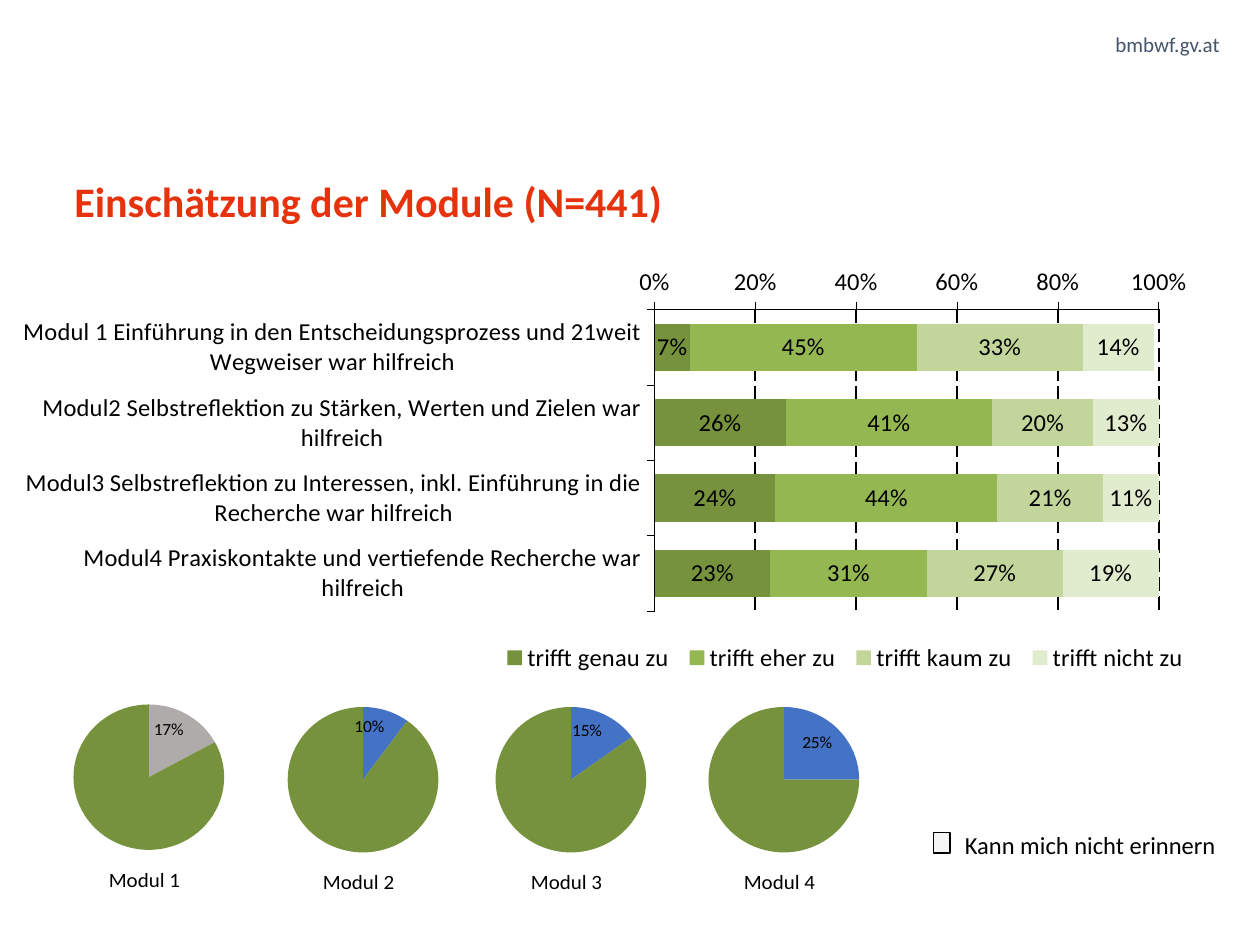
"""Build the slide that shows how participants rated the four modules."""
from lxml import etree
from pptx import Presentation
from pptx.chart import data
from pptx.dml.color import RGBColor
from pptx.enum import chart as charts, dml, shapes, text
from pptx.oxml import ns
from pptx.util import Inches, Pt

FONT = "Calibri"
BLACK = RGBColor(0x00, 0x00, 0x00)
RED = RGBColor(0xE6, 0x33, 0x0E)
SLATE = RGBColor(0x44, 0x54, 0x6A)
GREY = RGBColor(0xAF, 0xAB, 0xAB)
BLUE = RGBColor(0x44, 0x72, 0xC4)
PALE = RGBColor(0xF5, 0xF5, 0xF5)
GREEN = RGBColor(0x76, 0x92, 0x3C)

TITLE = "Einschätzung der Module (N=441)"
MODULES = [
    "Modul 1 Einführung in den Entscheidungsprozess und 21weit Wegweiser war hilfreich",
    "Modul2 Selbstreflektion zu Stärken, Werten und Zielen war hilfreich",
    "Modul3 Selbstreflektion zu Interessen, inkl. Einführung in die Recherche war hilfreich",
    "Modul4 Praxiskontakte und vertiefende Recherche war hilfreich",
]
RATINGS = [
    ("trifft genau zu", (0.07, 0.26, 0.24, 0.23), GREEN),
    ("trifft eher zu", (0.45, 0.41, 0.44, 0.31), RGBColor(0x95, 0xB7, 0x51)),
    ("trifft kaum zu", (0.33, 0.20, 0.21, 0.27), RGBColor(0xC2, 0xD6, 0x9B)),
    ("trifft nicht zu", (0.14, 0.13, 0.11, 0.19), RGBColor(0xE1, 0xEB, 0xCD)),
]
FORGOTTEN = [
    ("Modul 1", 0.17, GREY, 0.12, 5.22),
    ("Modul 2", 0.10, BLUE, 1.82, 5.24),
    ("Modul 3", 0.15, BLUE, 3.47, 5.24),
    ("Modul 4", 0.25, BLUE, 5.16, 5.24),
]


def set_font(font, size, color=BLACK, bold=False):
    font.name, font.size, font.bold = FONT, Pt(size), bold
    font.color.rgb = color


def set_fill(target, color):
    target.fill.solid()
    target.fill.fore_color.rgb = color


def set_layout(element, index, **values):
    for old in element.findall(ns.qn("c:layout")):
        element.remove(old)
    layout = etree.Element(ns.qn("c:layout"))
    manual = etree.SubElement(layout, ns.qn("c:manualLayout"))
    settings = {"xMode": "edge", "yMode": "edge", **values}
    for name, value in settings.items():
        etree.SubElement(manual, ns.qn("c:" + name)).set("val", str(value))
    element.insert(index, layout)


def add_chart(slide, kind, box, categories, series):
    chart_data = data.CategoryChartData(number_format="0%")
    chart_data.categories = categories
    for name, values in series:
        chart_data.add_series(name, values)
    chart = slide.shapes.add_chart(kind, *map(Inches, box), chart_data).chart
    set_font(chart.font, 14)
    return chart


def plot_area(chart):
    return chart.element.find(".//" + ns.qn("c:plotArea"))


def add_rating_chart(slide):
    chart = add_chart(slide, charts.XL_CHART_TYPE.BAR_STACKED, (0.12, 2.12, 9.76, 3.54),
                      MODULES, [rating[:2] for rating in RATINGS])
    chart.has_title = False
    plot = chart.plots[0]
    plot.gap_width, plot.overlap, plot.vary_by_categories = 60, 100, False
    plot.has_data_labels = True
    labels = plot.data_labels
    labels.show_value = True
    labels.number_format, labels.number_format_is_linked = "0%", False
    labels.position = charts.XL_LABEL_POSITION.CENTER
    set_font(labels.font, 14)
    for series, rating in zip(plot.series, RATINGS):
        set_fill(series.format, rating[2])
    for axis in (chart.category_axis, chart.value_axis):
        axis.major_tick_mark = charts.XL_TICK_MARK.OUTSIDE
        axis.format.line.color.rgb = BLACK
        axis.format.line.width = Pt(0.25)
        set_font(axis.tick_labels.font, 14)
    chart.category_axis.reverse_order = True
    axis = chart.value_axis
    axis.minimum_scale, axis.maximum_scale, axis.major_unit = 0, 1, 0.2
    axis.tick_labels.number_format = "0%"
    axis.tick_labels.number_format_is_linked = False
    grid = axis.major_gridlines.format.line
    grid.color.rgb, grid.width = BLACK, Pt(1)
    grid.dash_style = dml.MSO_LINE.LONG_DASH
    chart.has_legend = True
    legend = chart.legend
    legend.position = charts.XL_LEGEND_POSITION.BOTTOM
    legend.include_in_layout = False
    set_font(legend.font, 14)
    set_layout(legend._element, 1, x=0.39, y=0.83, w=0.57, h=0.09)
    set_layout(plot_area(chart), 0, layoutTarget="inner", x=0.52, y=0.09, w=0.41, h=0.68)


def add_pie(slide, name, share, color, left, top):
    chart = add_chart(slide, charts.XL_CHART_TYPE.PIE, (left, top, 1.93, 1.91),
                      ["1", "2"], [(name, (share, round(1 - share, 2)))])
    chart.has_legend = False
    chart.has_title = True
    frame = chart.chart_title.text_frame
    frame.text = name
    set_font(frame.paragraphs[0].runs[0].font, 12)
    set_layout(chart.chart_title._element, 1, x=0.37, y=0.88)
    set_layout(plot_area(chart), 0, layoutTarget="inner", x=0.24, y=0.2, w=0.62, h=0.63)
    series = chart.plots[0].series[0]
    for index, fill in enumerate((color, GREEN)):
        set_fill(series.points[index].format, fill)
    label = series.points[0].data_label
    set_font(label.font, 10)
    label.position = charts.XL_LABEL_POSITION.INSIDE_END
    series.data_labels.show_value = False


def write(shape, words, size, color, bold=False, align=text.PP_ALIGN.LEFT, inset=0, wrap=True):
    frame = shape.text_frame
    frame.word_wrap = wrap
    frame.vertical_anchor = text.MSO_ANCHOR.TOP
    frame.margin_left = frame.margin_right = Inches(inset)
    frame.margin_top = frame.margin_bottom = Inches(inset / 2)
    frame.text = words
    paragraph = frame.paragraphs[0]
    paragraph.alignment = align
    set_font(paragraph.runs[0].font, size, color, bold)
    return paragraph


def add_text(slide, box, *args, **options):
    write(slide.shapes.add_textbox(*map(Inches, box)), *args, **options)


def main():
    presentation = Presentation()
    presentation.slide_width, presentation.slide_height = Inches(10), Inches(7.5)
    slide = presentation.slides.add_slide(presentation.slide_layouts[5])
    add_text(slide, (7.27, 0.25, 2.41, 0.2), "bmbwf.gv.at", 12, SLATE,
             align=text.PP_ALIGN.RIGHT)
    title = slide.shapes.title
    title.left, title.top, title.width, title.height = map(Inches, (0.59, 1.44, 8.73, 0.91))
    write(title, TITLE, 24, RED, bold=True, wrap=False).line_spacing = 0.9
    add_rating_chart(slide)
    for pie in FORGOTTEN:
        add_pie(slide, *pie)
    add_text(slide, (7.56, 6.54, 2.44, 0.34), "Kann mich nicht erinnern", 14, BLACK, inset=0.1)
    key = slide.shapes.add_shape(shapes.MSO_SHAPE.RECTANGLE,
                                 *map(Inches, (7.41, 6.61, 0.13, 0.16)))
    key.shadow.inherit = False
    set_fill(key, PALE)
    key.line.color.rgb, key.line.width = BLACK, Pt(0.75)
    presentation.save("out.pptx")


if __name__ == "__main__":
    main()
